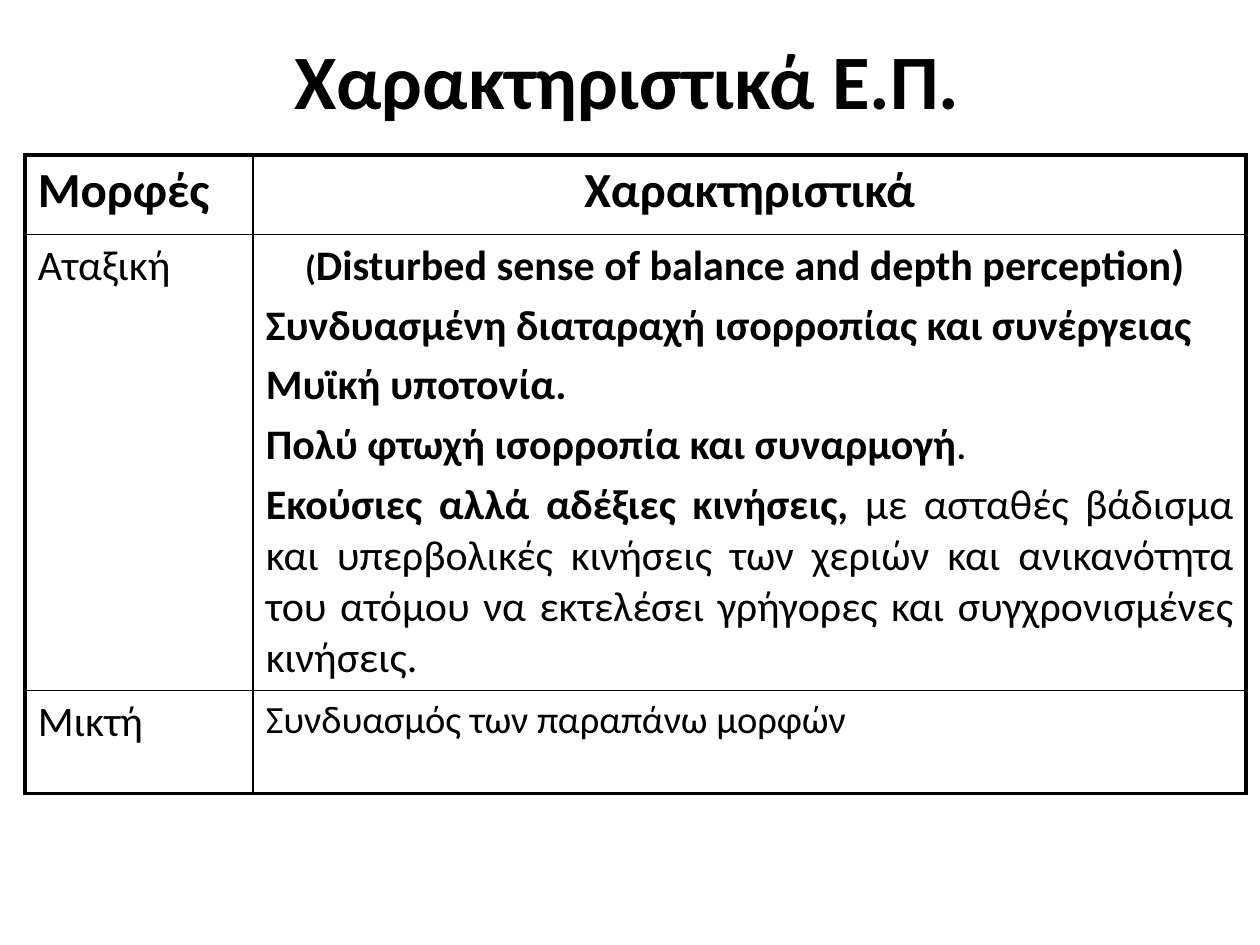
"""Build a slide with a titled table of forms and their characteristics."""
from lxml import etree
from pptx import Presentation
from pptx import util as u
from pptx.dml.color import RGBColor
from pptx.enum import text
from pptx.oxml.ns import qn

COLORS = {"ink": "000000", "page": "FFFFFF"}
FONT = "Calibri"
OUTER, INNER = 2.25, 1
COLUMNS = [1.81, 7.88]
ROWS = [0.63, 3.62, 0.82]
LEFT, CENTER, JUSTIFY = (text.PP_ALIGN.LEFT, text.PP_ALIGN.CENTER,
                         text.PP_ALIGN.JUSTIFY)

TITLE = [(CENTER, [("Χαρακτηριστικά Ε.Π.", 44, True)])]
CELLS = [
    [
        [(LEFT, [("Μορφές", 28, True)])],
        [(CENTER, [("Χαρακτηριστικά", 28, True)])],
    ],
    [
        [(LEFT, [("Αταξική", 24, False)])],
        [
            (CENTER, [("(", 20, True),
                      ("Disturbed sense of balance and depth perception) ", 24, True)]),
            (JUSTIFY, [("Συνδυασμένη διαταραχή ισορροπίας και συνέργειας ", 24, True)]),
            (JUSTIFY, [("Μυϊκή υποτονία. ", 24, True)]),
            (JUSTIFY, [("Πολύ φτωχή ισορροπία και συναρμογή", 24, True),
                       (". ", 24, False)]),
            (JUSTIFY, [("Εκούσιες αλλά αδέξιες κινήσεις,", 24, True),
                       (" με ασταθές βάδισμα και υπερβολικές κινήσεις των χεριών "
                        "και ανικανότητα του ατόμου να εκτελέσει γρήγορες και "
                        "συγχρονισμένες κινήσεις.", 24, False),
                       (" ", 20, False)]),
        ],
    ],
    [
        [(LEFT, [("Μικτή", 24, False)])],
        [(LEFT, [("Συνδυασμός των παραπάνω μορφών", 22, False)])],
    ],
]


def write_text(frame, paragraphs):
    """Fill a text frame with aligned paragraphs of formatted spans."""
    frame.word_wrap = True
    for index, (alignment, spans) in enumerate(paragraphs):
        para = frame.add_paragraph() if index else frame.paragraphs[0]
        para.alignment = alignment
        if index:
            para.space_before = u.Pt(4.8)
        for words, size, bold in spans:
            span = para.add_run()
            span.text = words
            for name, value in {"name": FONT, "size": u.Pt(size), "bold": bold}.items():
                setattr(span.font, name, value)
            span.font.color.rgb = RGBColor.from_string(COLORS["ink"])


def set_borders(cell, widths):
    """Draw the borders of a cell from a dict of side letters and widths."""
    properties = cell._tc.get_or_add_tcPr()
    for index, (side, width) in enumerate(widths.items()):
        line = etree.Element(qn(f"a:ln{side}"), w=str(u.Pt(width)))
        fill = etree.SubElement(line, qn("a:solidFill"))
        etree.SubElement(fill, qn("a:srgbClr"), val=COLORS["ink"])
        properties.insert(index, line)


def add_title(page):
    """Add the centred slide title."""
    box = page.shapes.add_textbox(u.Inches(0.31), u.Inches(0),
                                  u.Inches(9.34), u.Inches(1.25))
    box.text_frame.vertical_anchor = text.MSO_ANCHOR.MIDDLE
    write_text(box.text_frame, TITLE)


def add_forms_table(page):
    """Add the table with a heavy frame and thin inner lines."""
    frame = page.shapes.add_table(len(ROWS), len(COLUMNS), u.Inches(0.2), u.Inches(1.23),
                                  u.Inches(sum(COLUMNS)), u.Inches(sum(ROWS)))
    table = frame.table
    table.first_row = table.horz_banding = False
    for column, width in zip(table.columns, COLUMNS):
        column.width = u.Inches(width)
    for row, height in zip(table.rows, ROWS):
        row.height = u.Inches(height)
    last_row, last_column = len(ROWS) - 1, len(COLUMNS) - 1
    for r, contents in enumerate(CELLS):
        for c, paragraphs in enumerate(contents):
            cell = table.cell(r, c)
            cell.fill.background()
            edges = {"L": c == 0, "R": c == last_column, "T": r == 0, "B": r == last_row}
            set_borders(cell, {side: OUTER if edge else INNER
                               for side, edge in edges.items()})
            write_text(cell.text_frame, paragraphs)


def main():
    """Build and save the deck."""
    deck = Presentation()
    deck.slide_width, deck.slide_height = u.Inches(10), u.Inches(7.5)
    page = deck.slides.add_slide(deck.slide_layouts[6])
    page.background.fill.solid()
    page.background.fill.fore_color.rgb = RGBColor.from_string(COLORS["page"])
    add_forms_table(page)
    add_title(page)
    deck.save("out.pptx")


if __name__ == "__main__":
    main()
